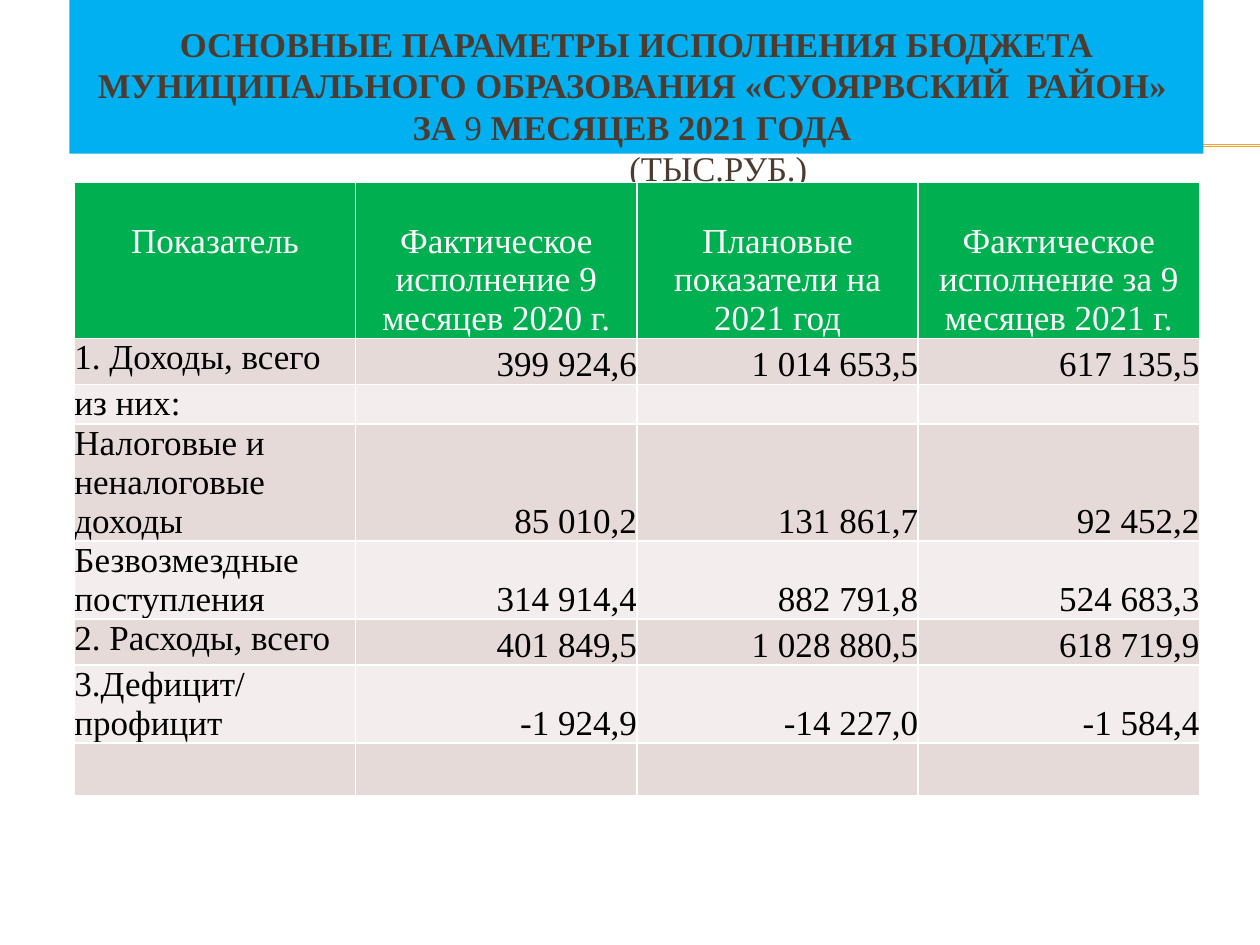
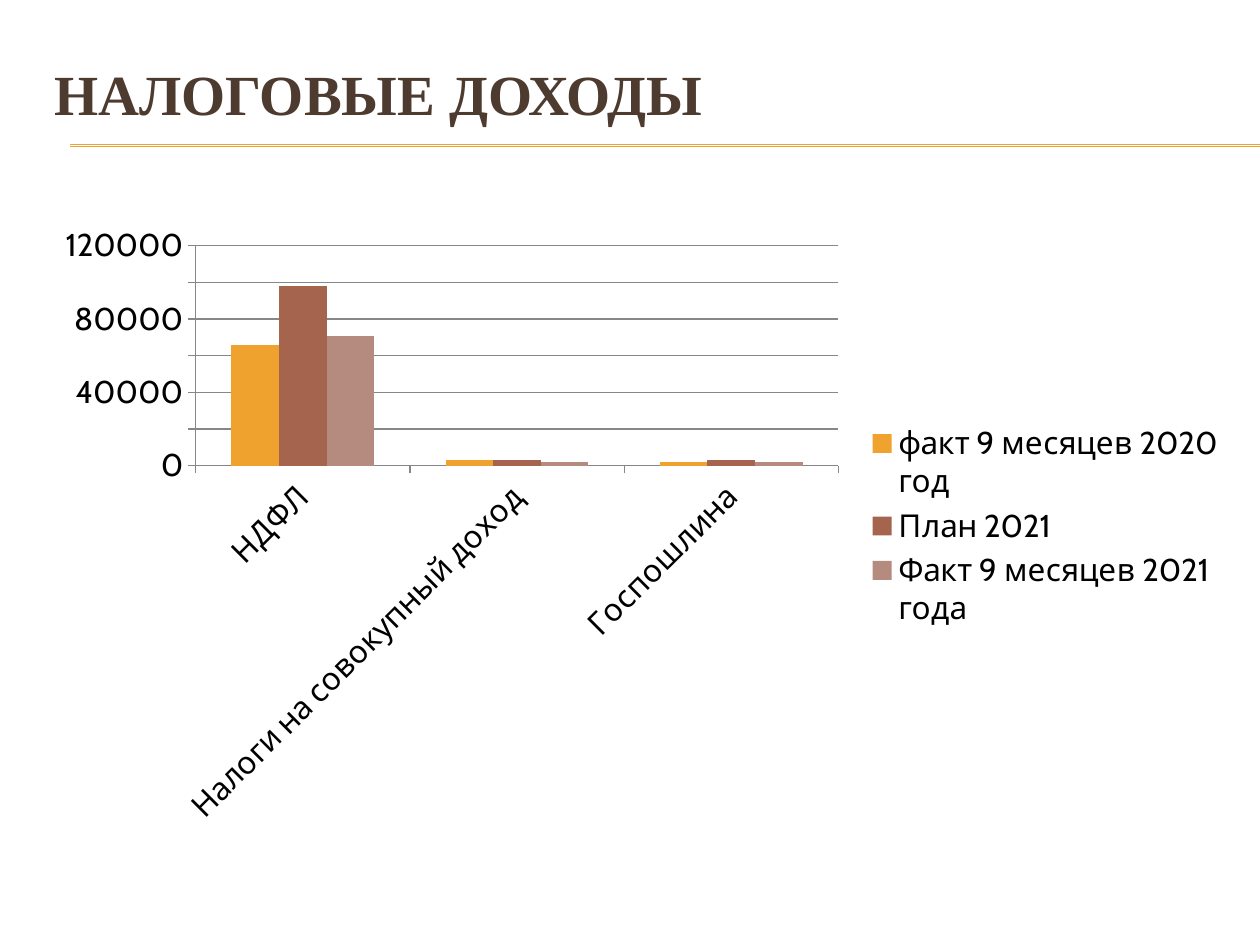
from pptx import Presentation
from pptx.chart.data import CategoryChartData
from pptx.dml.color import RGBColor
from pptx.enum.chart import XL_CHART_TYPE, XL_LEGEND_POSITION, XL_TICK_MARK
from pptx.enum.shapes import MSO_CONNECTOR, MSO_SHAPE
from pptx.enum.text import MSO_ANCHOR, PP_ALIGN
from pptx.oxml.ns import qn
from pptx.util import Cm, Pt
from lxml.etree import SubElement

BUDGET_TITLE = [
    [("ОСНОВНЫЕ ПАРАМЕТРЫ ИСПОЛНЕНИЯ БЮДЖЕТА", True)],
    [("МУНИЦИПАЛЬНОГО ОБРАЗОВАНИЯ «СУОЯРВСКИЙ  РАЙОН» ", True)],
    [("ЗА", True), (" 9", False), (" МЕСЯЦЕВ 2021 ГОДА ", True)],
    [("(ТЫС.РУБ.)", False)],
]
BUDGET_HEADER = [
    "Показатель",
    "Фактическое исполнение 9 месяцев 2020 г.",
    "Плановые показатели на 2021 год",
    "Фактическое исполнение за 9 месяцев 2021 г.",
]
BUDGET_ROWS = [
    ("1. Доходы, всего", "399 924,6", "1 014 653,5", "617 135,5"),
    ("из них:", "", "", ""),
    ("Налоговые и неналоговые доходы", "85 010,2", "131 861,7", "92 452,2"),
    ("Безвозмездные поступления", "314 914,4", "882 791,8", "524 683,3"),
    ("2. Расходы, всего", "401 849,5", "1 028 880,5", "618 719,9"),
    ("3.Дефицит/профицит", "-1 924,9", "-14 227,0", "-1 584,4"),
    ("", "", "", ""),
]
ROW_HEIGHTS = [3.12, 0.93, 0.8, 2.36, 1.56, 0.93, 1.56, 1.07]

TAX_TITLE = "НАЛОГОВЫЕ ДОХОДЫ"
TAX_KINDS = ["НДФЛ", "Налоги на совокупный доход", "Госпошлина"]

WHITE = RGBColor(0xFF, 0xFF, 0xFF)
BLACK = RGBColor(0, 0, 0)
BROWN = RGBColor(0x4E, 0x3B, 0x30)
AMBER = RGBColor(0xF0, 0xA2, 0x2E)
RUST = RGBColor(0xA5, 0x64, 0x4E)
ROSE = RGBColor(0xB5, 0x8B, 0x80)
SKY = RGBColor(0x00, 0xB0, 0xF0)
GREEN = RGBColor(0x00, 0xB0, 0x50)
GREY = RGBColor(0x87, 0x87, 0x87)
BAND_FILLS = [RGBColor(0xE5, 0xDA, 0xD8), RGBColor(0xF3, 0xEE, 0xED)]

TAX_SERIES = [
    ("факт 9 месяцев 2020 год", (66000, 3000, 2000), AMBER),
    ("План 2021", (98000, 3000, 3000), RUST),
    ("Факт 9 месяцев 2021 года", (71000, 2000, 2000), ROSE),
]

TEXT_FONT = "Times New Roman"
CHART_FONT = "Cabin"
SLIDE_WIDTH, SLIDE_HEIGHT = 25.4, 19.05
RULE_LEFT, RULE_TOPS = 1.42, (2.92, 2.95)


def write(frame, text, size=20, color=BLACK, bold=False,
          align=PP_ALIGN.LEFT, spacing=None):
    lines = [[(text, bold)]] if isinstance(text, str) else text
    frame.word_wrap = True
    for number, line in enumerate(lines):
        paragraph = frame.add_paragraph() if number else frame.paragraphs[0]
        paragraph.alignment = align
        if spacing:
            paragraph.line_spacing = spacing
        for words, heavy in line:
            run = paragraph.add_run()
            run.text = words
            run.font.name = TEXT_FONT
            run.font.size = Pt(size)
            run.font.bold = heavy
            run.font.color.rgb = color


def add_ruled_slide(deck):
    slide = deck.slides.add_slide(deck.slide_layouts[6])
    for top in RULE_TOPS:
        rule = slide.shapes.add_connector(
            MSO_CONNECTOR.STRAIGHT, Cm(RULE_LEFT), Cm(top), Cm(SLIDE_WIDTH), Cm(top))
        rule.line.color.rgb = AMBER
        rule.line.width = Pt(0.75)
        SubElement(rule._element.spPr, qn("a:effectLst"))
    return slide


def fill_cell(cell, text, fill, **style):
    cell.margin_left = cell.margin_right = cell.margin_top = cell.margin_bottom = 0
    cell.fill.solid()
    cell.fill.fore_color.rgb = fill
    if text:
        write(cell.text_frame, text, **style)


def build_budget(deck):
    slide = add_ruled_slide(deck)
    banner = slide.shapes.add_shape(
        MSO_SHAPE.RECTANGLE, Cm(1.4), 0, Cm(22.86), Cm(3.1))
    banner.shadow.inherit = False
    banner.fill.solid()
    banner.fill.fore_color.rgb = SKY
    banner.line.fill.background()
    heading = banner.text_frame
    heading.vertical_anchor = MSO_ANCHOR.TOP
    heading.margin_top = Cm(0.46)
    write(heading, BUDGET_TITLE, size=19.8, color=BROWN,
          align=PP_ALIGN.CENTER, spacing=Pt(23.7))
    units = heading.paragraphs[-1]._p.get_or_add_pPr()
    units.set("marL", str(Cm(3.3)))

    budget = slide.shapes.add_table(
        len(ROW_HEIGHTS), len(BUDGET_HEADER),
        Cm(1.5), Cm(3.68), Cm(22.68), Cm(sum(ROW_HEIGHTS))).table
    for row, height in zip(budget.rows, ROW_HEIGHTS):
        row.height = Cm(height)
    for column, label in enumerate(BUDGET_HEADER):
        cell = budget.cell(0, column)
        fill_cell(cell, label, GREEN, color=WHITE, align=PP_ALIGN.CENTER)
        cell.margin_top = Cm(0.79)
    for number, (indicator, *amounts) in enumerate(BUDGET_ROWS, 1):
        fill = BAND_FILLS[(number - 1) % 2]
        fill_cell(budget.cell(number, 0), indicator, fill)
        for column, amount in enumerate(amounts, 1):
            cell = budget.cell(number, column)
            fill_cell(cell, amount, fill, align=PP_ALIGN.RIGHT, spacing=1.15)
            cell.vertical_anchor = MSO_ANCHOR.BOTTOM


def build_taxes(deck):
    slide = add_ruled_slide(deck)
    heading = slide.shapes.add_textbox(Cm(0.84), Cm(1.07), Cm(24.13), Cm(2.34))
    write(heading.text_frame, TAX_TITLE, size=32.4, color=BROWN, bold=True)

    data = CategoryChartData()
    data.categories = TAX_KINDS
    for name, values, _ in TAX_SERIES:
        data.add_series(name, values)
    taxes = slide.shapes.add_chart(
        XL_CHART_TYPE.COLUMN_CLUSTERED,
        Cm(0.84), Cm(4.32), Cm(24.13), Cm(12.57), data).chart
    taxes.has_title = False
    taxes.font.name = CHART_FONT
    taxes.font.size = Pt(18)
    taxes.font.color.rgb = BLACK
    taxes.has_legend = True
    taxes.legend.position = XL_LEGEND_POSITION.RIGHT
    taxes.legend.include_in_layout = False
    for axis in (taxes.category_axis, taxes.value_axis):
        axis.major_tick_mark = XL_TICK_MARK.OUTSIDE
        axis.format.line.color.rgb = GREY
    taxes.value_axis.has_major_gridlines = True
    taxes.value_axis.major_gridlines.format.line.color.rgb = GREY
    columns = taxes.plots[0]
    columns.gap_width = 150
    columns.overlap = 0
    columns.vary_by_categories = False
    for series, (_, _, color) in zip(columns.series, TAX_SERIES):
        series.format.fill.solid()
        series.format.fill.fore_color.rgb = color


def main():
    deck = Presentation()
    deck.slide_width, deck.slide_height = Cm(SLIDE_WIDTH), Cm(SLIDE_HEIGHT)
    build_budget(deck)
    build_taxes(deck)
    deck.save("out.pptx")


if __name__ == "__main__":
    main()
